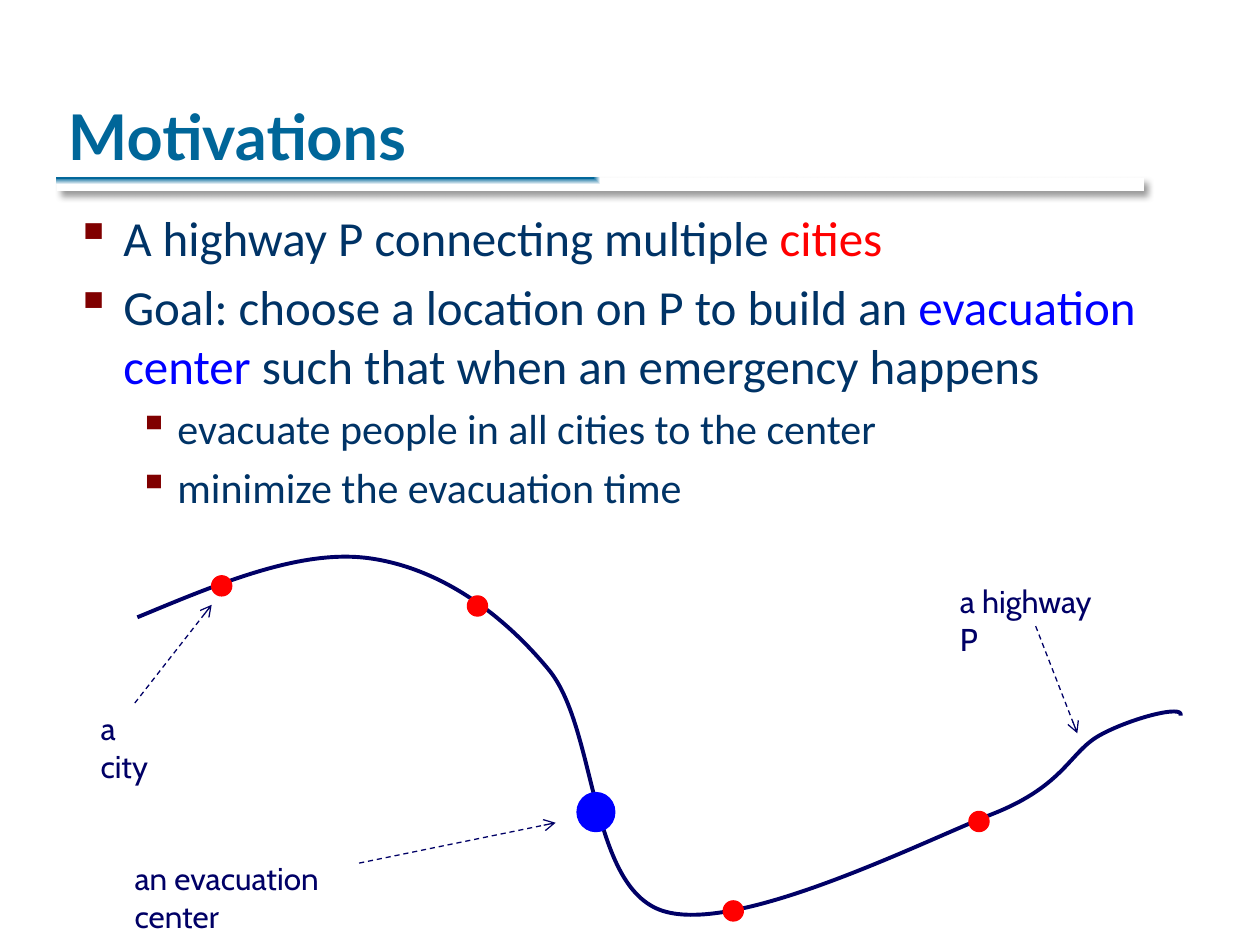
from lxml import etree
from pptx import Presentation
from pptx.dml.color import RGBColor
from pptx.enum.dml import MSO_LINE
from pptx.enum.shapes import MSO_CONNECTOR, MSO_SHAPE
from pptx.enum.text import MSO_ANCHOR
from pptx.oxml import parse_xml
from pptx.oxml.ns import qn
from pptx.util import Inches, Pt

DASH = MSO_LINE.DASH
STRAIGHT = MSO_CONNECTOR.STRAIGHT
OVAL = MSO_SHAPE.OVAL
RECTANGLE = MSO_SHAPE.RECTANGLE
TOP, BOTTOM = MSO_ANCHOR.TOP, MSO_ANCHOR.BOTTOM
NAMESPACE = "http://schemas.openxmlformats.org/drawingml/2006/main"

TEAL, MAROON, SLATE, NAVY = "006699", "800000", "003366", "000066"
RED, BLUE = "FF0000", "0000FF"

TITLE_FORMAT = {"name": "Lato", "size": Pt(36), "bold": True}
LABEL_FORMAT = {"name": "Cabin", "size": Pt(18)}
LEVELS = [
    {"size": 28, "margin": 0.38, "indent": -0.38},
    {"size": 24, "margin": 0.81, "indent": -0.31},
]
BULLETS = [
    (0, [("A highway P connecting multiple ", SLATE), ("cities", RED)]),
    (0, [("Goal: choose a location on P to build an ", SLATE),
         ("evacuation center ", BLUE),
         ("such that when an emergency happens", SLATE)]),
    (1, [("evacuate people in all cities to the center", SLATE)]),
    (1, [("minimize the evacuation time", SLATE)]),
]
HIGHWAY = [
    (1.09, 4.9),
    (1.74, 4.63), (2.38, 4.36), (2.92, 4.43),
    (3.46, 4.5), (3.96, 4.84), (4.35, 5.31),
    (4.74, 5.77), (4.67, 7.04), (5.26, 7.23),
    (5.85, 7.42), (7.3, 6.69), (7.88, 6.46),
    (8.46, 6.23), (8.49, 5.96), (8.74, 5.83),
    (8.98, 5.7), (9.4, 5.59), (9.37, 5.68),
]
CITIES = [(1.68, 4.57), (3.71, 4.73), (5.74, 7.15), (7.69, 6.44)]
LABELS = [
    ("a city", (0.7, 5.58, 0.74, 0.4), (1.07, 5.58), (1.68, 4.8)),
    ("a highway P", (7.52, 4.57, 1.38, 0.4), (8.22, 4.97), (8.55, 5.82)),
    ("an evacuation center", (0.97, 6.77, 2.32, 0.4), (2.85, 6.85), (4.41, 6.53)),
]


def color(value):
    return RGBColor.from_string(value)


def inches(values):
    return [Inches(value) for value in values]


def add_span(para, text, fill, formats):
    span = para.add_run()
    span.text = text
    for name, value in formats.items():
        setattr(span.font, name, value)
    span.font.color.rgb = color(fill)
    return span


def add_text_box(page, box, anchor=TOP):
    frame = page.shapes.add_textbox(*inches(box)).text_frame
    frame.word_wrap = True
    frame.vertical_anchor = anchor
    return frame


def add_title(page, box):
    para = add_text_box(page, box, BOTTOM).paragraphs[0]
    span = add_span(para, "Motivations", TEAL, TITLE_FORMAT)
    span.font._element.set("spc", "10")


def add_rule(page, box):
    rule = page.shapes.add_shape(RECTANGLE, *inches(box))
    rule.line.fill.background()
    rule.fill.background()
    properties = rule._element.spPr
    gradient = parse_xml(
        f'<a:gradFill xmlns:a="{NAMESPACE}" rotWithShape="0"><a:gsLst>'
        f'<a:gs pos="0"><a:srgbClr val="{TEAL}"/></a:gs>'
        '<a:gs pos="100000"><a:srgbClr val="FFFFFF"/></a:gs></a:gsLst>'
        '<a:path path="rect"><a:fillToRect r="100000" b="100000"/></a:path>'
        '</a:gradFill>')
    properties.replace(properties.find(qn("a:noFill")), gradient)
    properties.append(parse_xml(
        f'<a:effectLst xmlns:a="{NAMESPACE}">'
        f'<a:outerShdw blurRad="{Pt(4)}" dist="{Pt(3)}" dir="2700000" '
        'algn="tl" rotWithShape="0"><a:srgbClr val="000000">'
        '<a:alpha val="40000"/></a:srgbClr></a:outerShdw></a:effectLst>'))


def add_bullet(para, level):
    properties = para._p.get_or_add_pPr()
    properties.set("marL", str(Inches(level["margin"])))
    properties.set("indent", str(Inches(level["indent"])))
    bullet_color = etree.SubElement(properties, qn("a:buClr"))
    etree.SubElement(bullet_color, qn("a:srgbClr"), val=MAROON)
    etree.SubElement(properties, qn("a:buChar"), char="▪")


def add_body(page, box):
    frame = add_text_box(page, box)
    for index, (depth, spans) in enumerate(BULLETS):
        para = frame.add_paragraph() if index else frame.paragraphs[0]
        level = LEVELS[depth]
        para.level = depth
        add_bullet(para, level)
        if index:
            para.space_before = Pt(level["size"] * 0.2)
        for text, fill in spans:
            add_span(para, text, fill, {"name": "Calibri", "size": Pt(level["size"])})


def add_highway(page, points):
    start, *rest = [inches(point) for point in points]
    builder = page.shapes.build_freeform(*start)
    builder.add_line_segments(rest, close=False)
    highway = builder.convert_to_shape()
    highway.shadow.inherit = False
    highway.fill.background()
    highway.line.color.rgb = color(NAVY)
    highway.line.width = Pt(2.25)
    segments = list(highway._element.iter(qn("a:lnTo")))
    for first in range(0, len(segments), 3):
        curve = etree.Element(qn("a:cubicBezTo"))
        segments[first].addprevious(curve)
        for segment in segments[first:first + 3]:
            curve.append(segment[0])
            segment.getparent().remove(segment)


def add_dot(page, box, fill):
    dot = page.shapes.add_shape(OVAL, *inches(box))
    dot.shadow.inherit = False
    dot.fill.solid()
    dot.fill.fore_color.rgb = color(fill)
    dot.line.color.rgb = color(fill)
    dot.line.width = Pt(0.75)


def add_label(page, text, box, start, end):
    para = add_text_box(page, box).paragraphs[0]
    add_span(para, text, NAVY, LABEL_FORMAT)
    arrow = page.shapes.add_connector(STRAIGHT, *inches(start + end))
    arrow.line.color.rgb = color(NAVY)
    arrow.line.width = Pt(0.75)
    arrow.line.dash_style = DASH
    properties = arrow._element.spPr
    etree.SubElement(properties.find(qn("a:ln")), qn("a:tailEnd"), type="arrow")
    etree.SubElement(properties, qn("a:effectLst"))


def main():
    deck = Presentation()
    deck.slide_width, deck.slide_height = Inches(10), Inches(7.5)
    page = deck.slides.add_slide(deck.slide_layouts[6])
    add_rule(page, (0.45, 1.41, 8.63, 0.11))
    add_title(page, (0.44, 0.17, 8.5, 1.25))
    add_body(page, (0.5, 1.6, 8.95, 1.37))
    add_highway(page, HIGHWAY)
    for left, top in CITIES:
        add_dot(page, (left, top, 0.16, 0.16), RED)
    add_dot(page, (4.58, 6.29, 0.3, 0.31), BLUE)
    for label in LABELS:
        add_label(page, *label)
    deck.save("out.pptx")


if __name__ == "__main__":
    main()
